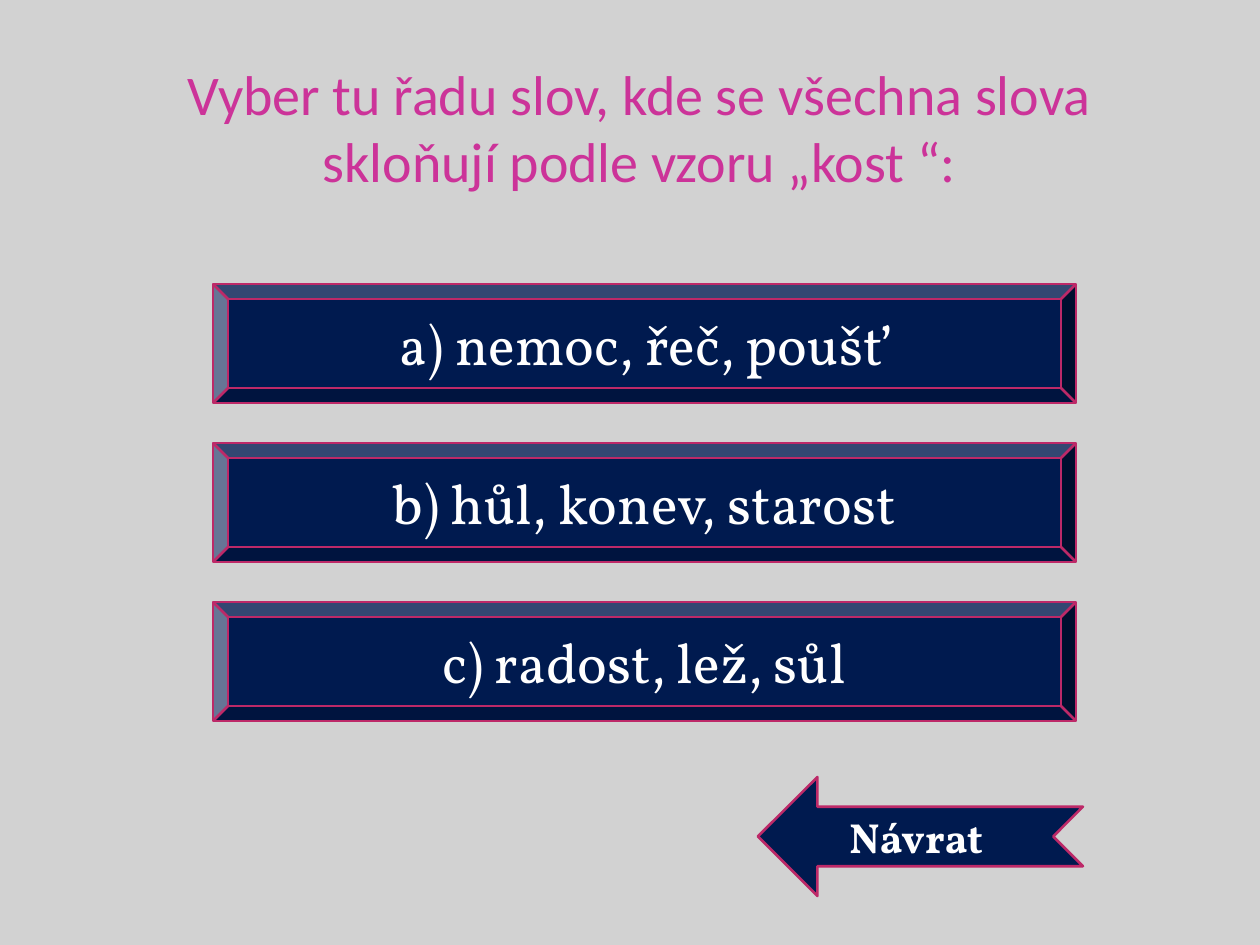
from pptx import Presentation
from pptx import util as u
from pptx.dml.color import RGBColor
from pptx.enum import shapes, text

TITLE = "Vyber tu řadu slov, kde se všechna slova skloňují podle vzoru „kost “:"
ANSWERS = ["a) nemoc, řeč, poušť", "b) hůl, konev, starost", "c) radost, lež, sůl"]
BACK = "Návrat "
COLORS = {"bg": "D2D2D2", "title": "CC3399", "fill": "001A4F",
          "line": "BD2968", "text": "FFFFFF"}

TITLE_BOX = (123, 37, 1033, 157)
FIRST_ANSWER = (213, 284, 863, 119)
ANSWER_STEP = 159
BACK_BOX = (758, 777, 325, 119)


def px(n):
    return u.Emu(round(n * 914400 / 126))


def rgb(name):
    return RGBColor.from_string(COLORS[name])


def write(sp, words, size=32, font="Vollkorn", color="text", bold=False,
          anchor=text.MSO_ANCHOR.MIDDLE):
    tf = sp.text_frame
    tf.word_wrap = True
    tf.auto_size = text.MSO_AUTO_SIZE.NONE
    tf.vertical_anchor = anchor
    p = tf.paragraphs[0]
    p.alignment = text.PP_ALIGN.CENTER
    r = p.add_run()
    r.text = words
    r.font.size = u.Pt(size)
    r.font.name = font
    r.font.bold = bold
    r.font.color.rgb = rgb(color)


def add_button(s, kind, box, words, **fmt):
    sp = s.shapes.add_shape(kind, *map(px, box))
    sp.shadow.inherit = False
    sp.fill.solid()
    sp.fill.fore_color.rgb = rgb("fill")
    sp.line.color.rgb = rgb("line")
    sp.line.width = u.Pt(1.5)
    write(sp, words, **fmt)
    return sp


prs = Presentation()
prs.slide_width, prs.slide_height = px(1260), px(945)
s = prs.slides.add_slide(prs.slide_layouts[5])
s.background.fill.solid()
s.background.fill.fore_color.rgb = rgb("bg")

title = s.shapes.title
title.left, title.top, title.width, title.height = map(px, TITLE_BOX)
tf = title.text_frame
tf.margin_left = tf.margin_right = tf.margin_bottom = 0
tf.margin_top = u.Inches(0.05)
write(title, TITLE, font="Calibri", color="title", anchor=text.MSO_ANCHOR.BOTTOM)

left, top, width, height = FIRST_ANSWER
for i, answer in enumerate(ANSWERS):
    add_button(s, shapes.MSO_SHAPE.BEVEL,
               (left, top + i * ANSWER_STEP, width, height), answer)

back = add_button(s, shapes.MSO_SHAPE.NOTCHED_RIGHT_ARROW, BACK_BOX, BACK,
                  size=24, bold=True)
back.element.spPr.xfrm.set("flipH", "1")

prs.save("out.pptx")
